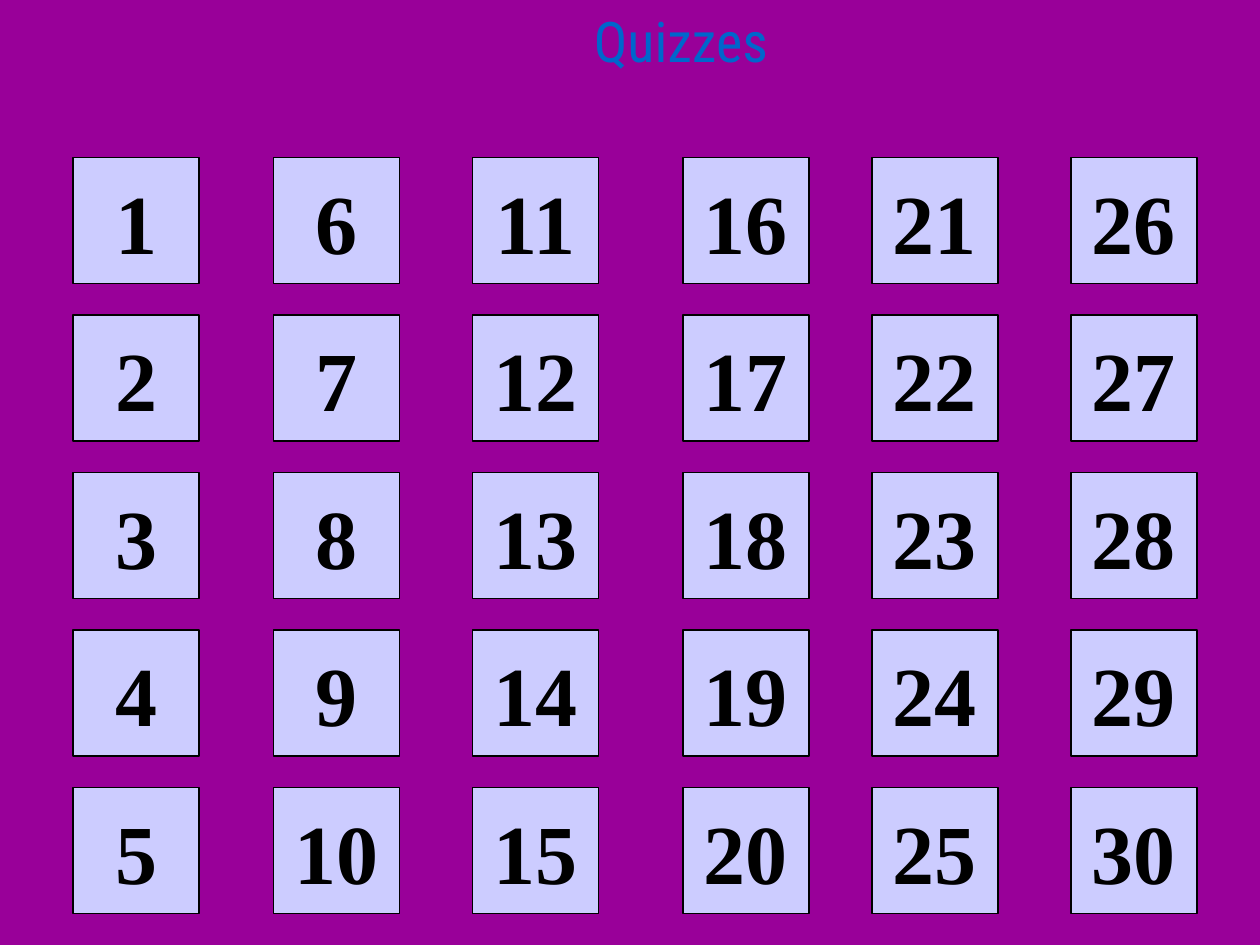
from dataclasses import dataclass

import pptx
import pptx.dml.color
import pptx.enum.shapes
import pptx.enum.text
import pptx.util

Inches = pptx.util.Inches


@dataclass(frozen=True)
class Theme:
    background: str = "990099"
    tile_fill: str = "CCCCFF"
    tile_text: str = "000000"
    title_text: str = "0066CC"
    tile_font: str = "Times New Roman"
    title_font: str = "Roboto Condensed"
    tile_size: int = 48
    title_size: int = 32
    line_width: float = 0.75


@dataclass(frozen=True)
class Tile:
    number: int
    left: float
    top: float
    side: float = 1


THEME = Theme()
COLUMN_LEFTS = (0.58, 2.17, 3.75, 5.42, 6.92, 8.5)
ROW_COUNT = 5
ROW_PITCH = 1.25


def rgb(value: str) -> pptx.dml.color.RGBColor:
    return pptx.dml.color.RGBColor.from_string(value)


def write_text(shape, text: str, *, font: str, size: int, color: str,
               bold: bool = False, side_margin: float = 0.1,
               anchor=pptx.enum.text.MSO_ANCHOR.MIDDLE) -> None:
    frame = shape.text_frame
    frame.word_wrap = False
    frame.auto_size = pptx.enum.text.MSO_AUTO_SIZE.NONE
    frame.vertical_anchor = anchor
    frame.margin_left = frame.margin_right = Inches(side_margin)
    paragraph = frame.paragraphs[0]
    paragraph.alignment = pptx.enum.text.PP_ALIGN.CENTER
    run = paragraph.add_run()
    run.text = text
    run.font.name = font
    run.font.size = pptx.util.Pt(size)
    run.font.bold = bold
    run.font.color.rgb = rgb(color)


def draw_tile(slide, tile: Tile) -> None:
    shape = slide.shapes.add_shape(
        pptx.enum.shapes.MSO_SHAPE.ACTION_BUTTON_CUSTOM,
        Inches(tile.left), Inches(tile.top),
        Inches(tile.side), Inches(tile.side))
    shape.shadow.inherit = False
    shape.fill.solid()
    shape.fill.fore_color.rgb = rgb(THEME.tile_fill)
    shape.line.color.rgb = rgb(THEME.tile_text)
    shape.line.width = pptx.util.Pt(THEME.line_width)
    write_text(shape, str(tile.number), font=THEME.tile_font,
               size=THEME.tile_size, color=THEME.tile_text, bold=True)


def draw_title(slide, text: str) -> None:
    title = slide.shapes.title
    title.left, title.top = Inches(4.58), Inches(0)
    title.width, title.height = Inches(1.65), Inches(0.54)
    write_text(title, text, font=THEME.title_font, size=THEME.title_size,
               color=THEME.title_text, side_margin=0,
               anchor=pptx.enum.text.MSO_ANCHOR.TOP)


def main() -> None:
    presentation = pptx.Presentation()
    presentation.slide_width = Inches(10)
    presentation.slide_height = Inches(7.5)
    slide = presentation.slides.add_slide(
        presentation.slide_layouts.get_by_name("Title Only"))
    slide.background.fill.solid()
    slide.background.fill.fore_color.rgb = rgb(THEME.background)

    draw_title(slide, "Quizzes")
    for column, left in enumerate(COLUMN_LEFTS):
        for row in range(ROW_COUNT):
            draw_tile(slide, Tile(number=column * ROW_COUNT + row + 1,
                                  left=left, top=(row + 1) * ROW_PITCH))

    presentation.save("out.pptx")


if __name__ == "__main__":
    main()
